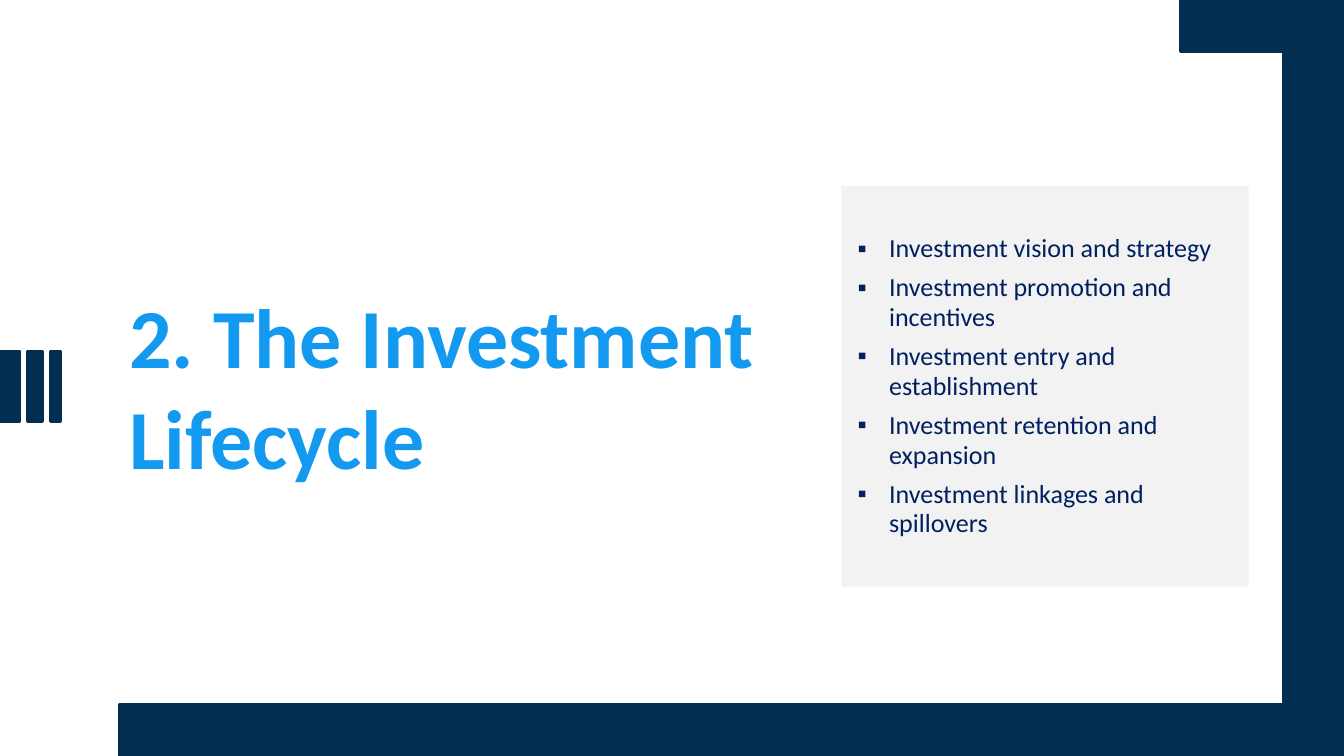
from dataclasses import dataclass

from lxml.etree import SubElement
from pptx import Presentation
from pptx.dml.color import RGBColor
from pptx.enum.shapes import MSO_SHAPE
from pptx.enum.text import MSO_ANCHOR, MSO_AUTO_SIZE, PP_ALIGN
from pptx.oxml.ns import qn
from pptx.shapes.autoshape import Shape
from pptx.text.text import TextFrame, _Paragraph
from pptx.util import Pt


@dataclass(frozen=True)
class Theme:
    font: str = "Calibri"
    title_size: float = 60
    body_size: float = 18.6
    title: str = "139AF0"
    body: str = "002060"
    panel: str = "F2F2F2"
    frame: str = "022F51"


@dataclass(frozen=True)
class Box:
    left: float
    top: float
    width: float
    height: float


THEME = Theme()
SLIDE_W, SLIDE_H = 960, 540

TITLE = Box(85, 90, 516, 371)
PANEL = Box(601, 133, 291, 286)

# Navy frame: top corner, right edge, bottom edge
BAND, EDGE = 37, 43
FRAME = [
    Box(843, 0, SLIDE_W - 843, BAND),
    Box(SLIDE_W - EDGE, BAND, EDGE, SLIDE_H - BAND),
    Box(85, SLIDE_H - BAND, SLIDE_W - EDGE - 85, BAND),
]

# Narrowing bars on the left edge
BARS = [Box(left, 250.75, width, 50.5)
        for left, width in ((0, 14.25), (19.5, 11), (36, 7.5))]

TOPICS = [
    "Investment vision and strategy",
    "Investment promotion and incentives",
    "Investment entry and establishment",
    "Investment retention and expansion",
    "Investment linkages and spillovers",
]


def add_rect(shapes, box: Box, fill: str, line: str = "") -> Shape:
    sp = shapes.add_shape(MSO_SHAPE.RECTANGLE, Pt(box.left), Pt(box.top),
                          Pt(box.width), Pt(box.height))
    sp.shadow.inherit = False
    sp.fill.solid()
    sp.fill.fore_color.rgb = RGBColor.from_string(fill)
    if line:
        sp.line.color.rgb = RGBColor.from_string(line)
        sp.line.width = Pt(2)
    else:
        sp.line.fill.background()
    return sp


def set_frame(tf: TextFrame) -> None:
    tf.word_wrap = True
    tf.auto_size = MSO_AUTO_SIZE.NONE
    tf.vertical_anchor = MSO_ANCHOR.MIDDLE


def add_run(p: _Paragraph, text: str, size: float, color: str,
            bold: bool = False) -> None:
    p.alignment = PP_ALIGN.LEFT
    r = p.add_run()
    r.text = text
    r.font.name = THEME.font
    r.font.size = Pt(size)
    r.font.bold = bold
    r.font.color.rgb = RGBColor.from_string(color)


def set_bullet(p: _Paragraph, color: str) -> None:
    pPr = p._p.get_or_add_pPr()
    pPr.set("marL", str(Pt(27)))
    pPr.set("indent", str(Pt(-22.5)))
    SubElement(SubElement(pPr, qn("a:buClr")), qn("a:srgbClr"), val=color)
    SubElement(pPr, qn("a:buFont"), typeface="Arial")
    SubElement(pPr, qn("a:buChar"), char="▪")


def add_topics(tf: TextFrame, topics: list[str]) -> None:
    set_frame(tf)
    for i, topic in enumerate(topics):
        p = tf.paragraphs[0] if i == 0 else tf.add_paragraph()
        p.line_spacing = 0.95
        p.space_before = Pt(3.7)
        p.space_after = Pt(3)
        set_bullet(p, THEME.body)
        add_run(p, topic, THEME.body_size, THEME.body)


def main() -> None:
    prs = Presentation()
    prs.slide_width, prs.slide_height = Pt(SLIDE_W), Pt(SLIDE_H)
    s = prs.slides.add_slide(prs.slide_layouts[5])

    # Title
    title = s.shapes.title
    title.left, title.top = Pt(TITLE.left), Pt(TITLE.top)
    title.width, title.height = Pt(TITLE.width), Pt(TITLE.height)
    set_frame(title.text_frame)
    add_run(title.text_frame.paragraphs[0], "2. The Investment Lifecycle",
            THEME.title_size, THEME.title, bold=True)

    # Topic panel
    panel = add_rect(s.shapes, PANEL, THEME.panel)
    add_topics(panel.text_frame, TOPICS)

    # Frame and grouped bars
    for box in FRAME:
        add_rect(s.shapes, box, THEME.frame, THEME.frame)
    bars = s.shapes.add_group_shape()
    for box in BARS:
        add_rect(bars.shapes, box, THEME.frame, THEME.frame)

    prs.save("out.pptx")


if __name__ == "__main__":
    main()
